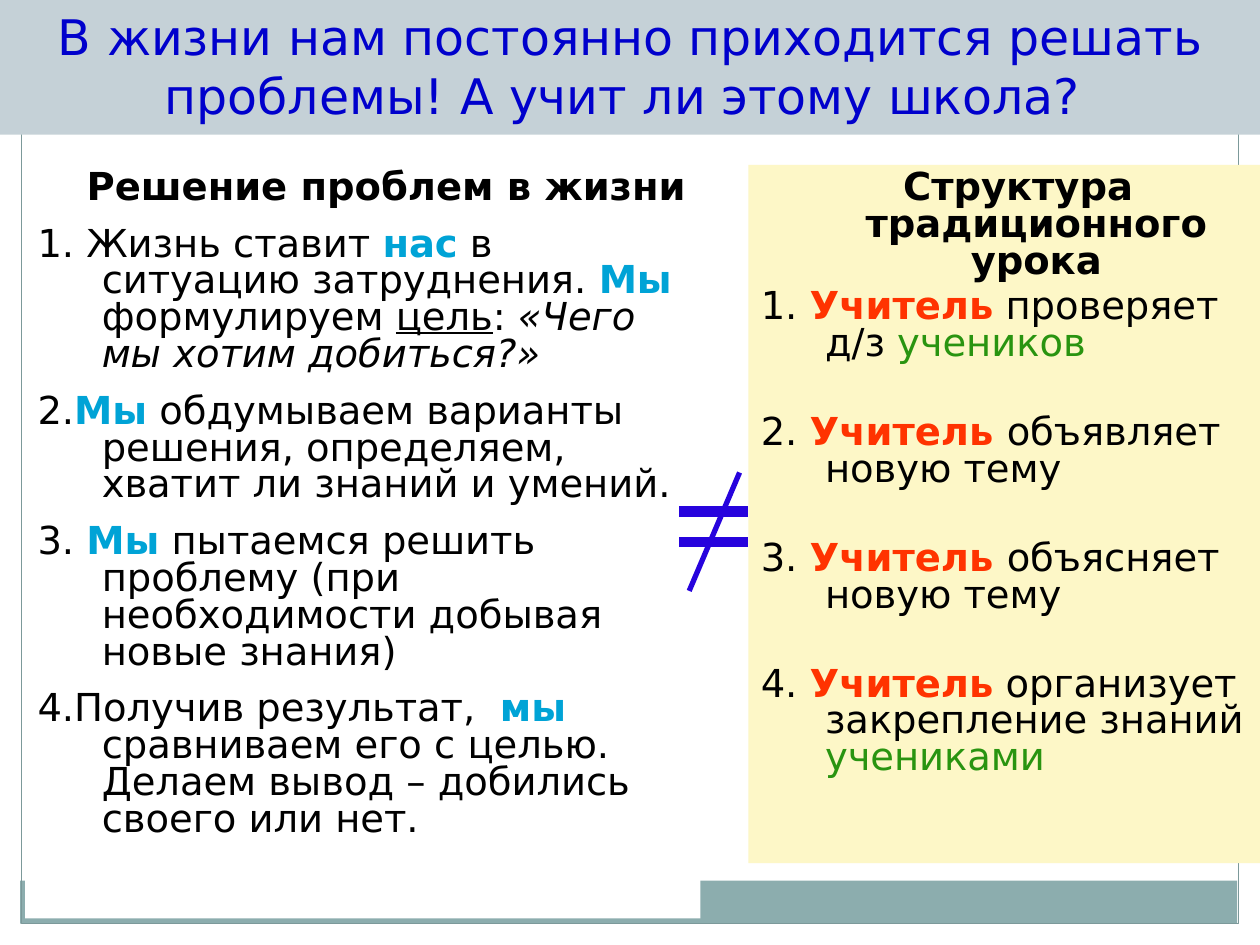
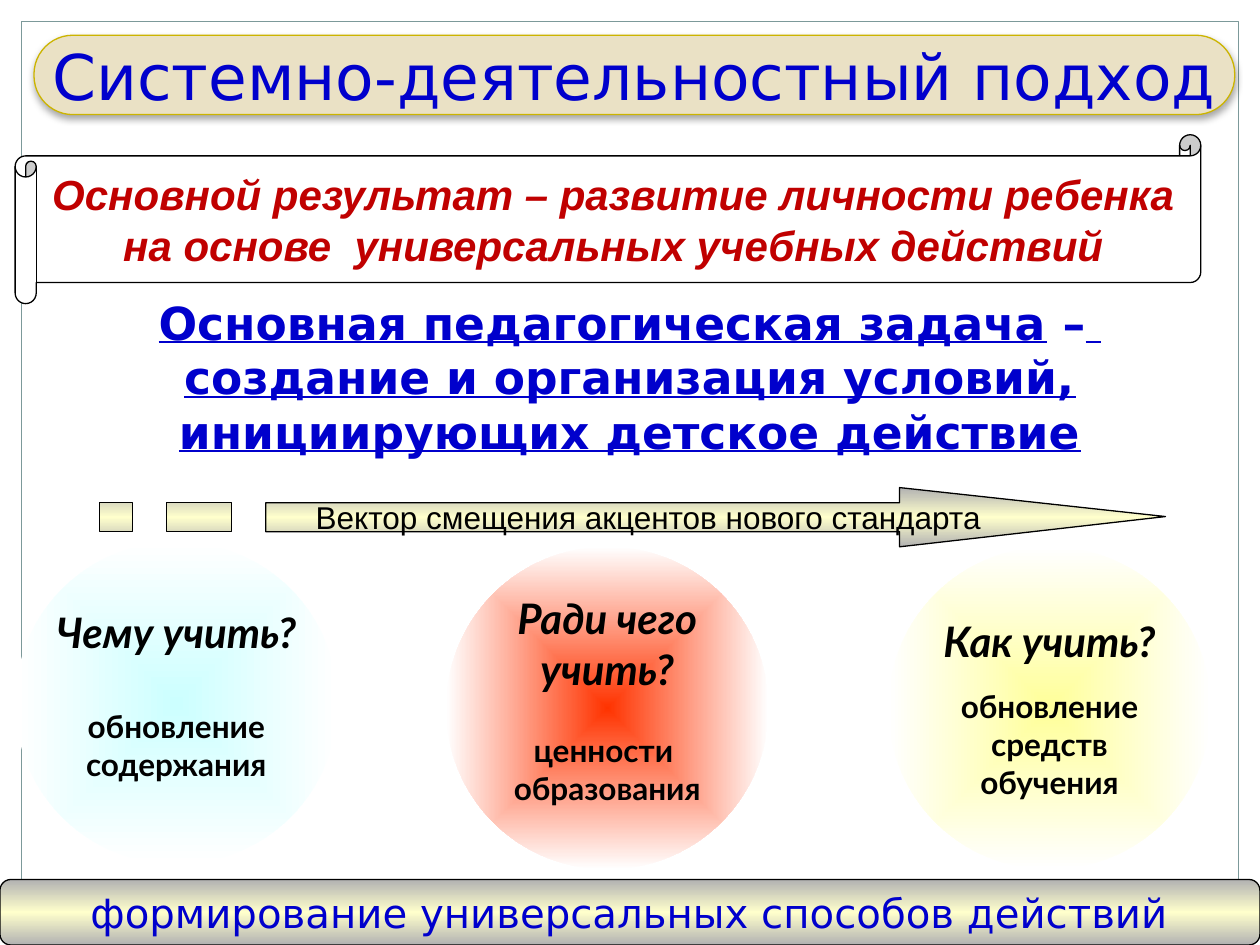
from pptx import Presentation
from pptx.dml.color import RGBColor
from pptx.enum.shapes import MSO_CONNECTOR, MSO_SHAPE
from pptx.enum.text import MSO_ANCHOR, PP_ALIGN
from pptx.oxml import parse_xml
from pptx.util import Inches, Pt

RECTANGLE, ELLIPSE = MSO_SHAPE.RECTANGLE, MSO_SHAPE.OVAL
ROUNDED, SCROLL = MSO_SHAPE.ROUNDED_RECTANGLE, MSO_SHAPE.HORIZONTAL_SCROLL
STRAIGHT = MSO_CONNECTOR.STRAIGHT
LEFT, CENTER = PP_ALIGN.LEFT, PP_ALIGN.CENTER
TOP, MIDDLE = MSO_ANCHOR.TOP, MSO_ANCHOR.MIDDLE

NAMESPACE = 'xmlns:a="http://schemas.openxmlformats.org/drawingml/2006/main"'
BLACK, WHITE = "000000", "FFFFFF"
TITLE_BLUE = "0000CC"
SIGN_BLUE = "2703DD"
FOOTER, FRAME = "8CADAE", "7C999A"
METAL = [(0, "B2B2B2"), (50, "FFFFCC"), (100, "B2B2B2")]
LINEAR_DOWN = '<a:lin ang="5400000" scaled="1"/>'
FROM_CENTER = ('<a:path path="shape"><a:fillToRect l="50000" t="50000" '
               'r="50000" b="50000"/></a:path>')

HANGING = 0.51
WE = {"color": "00A3D6", "bold": True}
TEACHER = {"color": "FF3300", "bold": True}
PUPILS = {"color": "299410"}


def rgb(color):
    return RGBColor.from_string(color)


class Slides:
    font = "DejaVu Sans"

    def __init__(self):
        self.deck = Presentation()
        self.deck.slide_width, self.deck.slide_height = Inches(10), Inches(7.5)
        self.page = None

    def start_page(self):
        self.page = self.deck.slides.add_slide(self.deck.slide_layouts[6])
        self.shape(RECTANGLE, 0.16, 6.99, 9.66, 0.34, fill=FOOTER)
        self.shape(RECTANGLE, 0.17, 0.17, 9.66, 7.16, line=FRAME)

    def shape(self, kind, left, top, width, height, fill=None, line=None, adjust=None):
        box = self.page.shapes.add_shape(
            kind, Inches(left), Inches(top), Inches(width), Inches(height))
        if adjust is not None:
            box.adjustments[0] = adjust
        self.paint(box, fill, line)
        return box

    def paint(self, box, fill, line):
        """Fill with a hex colour, gradient XML or nothing, and draw a thin outline."""
        if fill is None:
            box.fill.background()
        elif fill.startswith("<"):
            box._element.spPr.insert(2, parse_xml(fill))
        else:
            box.fill.solid()
            box.fill.fore_color.rgb = rgb(fill)
        if line:
            box.line.color.rgb = rgb(line)
            box.line.width = Pt(0.75)
        else:
            box.line.fill.background()
        box.shadow.inherit = False

    def gradient(self, stops, direction):
        steps = "".join(
            f'<a:gs pos="{place * 1000}"><a:srgbClr val="{color}"/></a:gs>'
            for place, color in stops)
        return (f'<a:gradFill {NAMESPACE} rotWithShape="1">'
                f'<a:gsLst>{steps}</a:gsLst>{direction}</a:gradFill>')

    def drop_shadow(self, box):
        properties = box._element.spPr
        properties.remove(properties.find("{*}effectLst"))
        properties.append(parse_xml(
            f'<a:effectLst {NAMESPACE}><a:outerShdw blurRad="{Pt(4)}" dist="{Pt(2)}" '
            'dir="5400000" rotWithShape="0"><a:srgbClr val="000000">'
            '<a:alpha val="35000"/></a:srgbClr></a:outerShdw></a:effectLst>'))

    def outline(self, contours, fill, line):
        """Build one freeform from several closed contours given in inches."""
        builder = None
        for contour in contours:
            first, *rest = [(Inches(x), Inches(y)) for x, y in contour]
            if builder is None:
                builder = self.page.shapes.build_freeform(*first, scale=1.0)
            else:
                builder.move_to(*first)
            builder.add_line_segments(rest, close=True)
        box = builder.convert_to_shape()
        self.paint(box, fill, line)
        return box

    def line(self, start, end, color, width):
        stroke = self.page.shapes.add_connector(
            STRAIGHT, *[Inches(value) for value in start + end])
        stroke.line.color.rgb = rgb(color)
        stroke.line.width = Pt(width)
        stroke._element.spPr.append(parse_xml(f"<a:effectLst {NAMESPACE}/>"))

    def text_box(self, left, top, width, height):
        return self.page.shapes.add_textbox(
            Inches(left), Inches(top), Inches(width), Inches(height))

    def frame(self, box, anchor=MIDDLE, wrap=True, left=0.1, bottom=0.05):
        box.text_frame.word_wrap = wrap
        box.text_frame.vertical_anchor = anchor
        box.text_frame.margin_left = Inches(left)
        box.text_frame.margin_bottom = Inches(bottom)

    def paragraph(self, box, spans, align=CENTER, before=0, spacing=None,
                  margin=0, indent=0, **style):
        """Add a paragraph; each span is a text or a (text, style changes) pair."""
        frame = box.text_frame
        para = frame.paragraphs[0]
        if para.runs:
            para = frame.add_paragraph()
        para.alignment = align
        para.space_before = Pt(before)
        if spacing:
            para.line_spacing = spacing
        properties = para._p.get_or_add_pPr()
        properties.set("marL", str(Inches(margin)))
        properties.set("indent", str(Inches(indent)))
        for item in spans:
            text, changes = (item, {}) if isinstance(item, str) else item
            self.span(para, text, **{**style, **changes})

    def span(self, para, text, size, color=BLACK, font=None,
             bold=False, italic=False, underline=False):
        span = para.add_run()
        span.text = text
        span.font.name = font or self.font
        span.font.size = Pt(size)
        span.font.color.rgb = rgb(color)
        span.font.bold, span.font.italic, span.font.underline = bold, italic, underline

    def column(self, box, heading, margin, indent, items, gaps):
        """Write a bold centred heading and hanging numbered items."""
        self.frame(box, TOP)
        self.paragraph(box, [heading], before=4.4, spacing=0.8, margin=margin,
                       indent=indent, size=22, bold=True)
        for spans, gap in zip(items, gaps):
            self.paragraph(box, spans, LEFT, gap, 0.8, HANGING, -HANGING, size=22)

    def circle(self, left, top, color, question, answer, gap, bottom):
        box = self.shape(ELLIPSE, left, top, 2.56, 2.56,
                         self.gradient([(0, color), (100, WHITE)], FROM_CENTER))
        self.frame(box, wrap=False, bottom=bottom)
        for text in question:
            self.paragraph(box, [text], size=24, font="Lato", bold=True, italic=True)
        for number, text in enumerate(answer):
            self.paragraph(box, [text], before=0 if number else gap,
                           size=18, font="Lato", bold=True)


def life_and_lesson(slides):
    slides.start_page()
    title = slides.shape(RECTANGLE, 0, -0.03, 10, 1.1, "C5D1D7")
    slides.frame(title)
    slides.paragraph(
        title, ["В жизни нам постоянно приходится решать проблемы! А учит ли этому школа? "],
        size=28, color=TITLE_BLUE)

    lesson = slides.shape(RECTANGLE, 5.94, 1.31, 4.06, 5.54, "FDF7C7")
    slides.column(lesson, "Структура традиционного урока", HANGING, -0.29, [
        ["1. ", ("Учитель", TEACHER), " проверяет д/з ", ("учеников", PUPILS)],
        ["2. ", ("Учитель ", TEACHER), "объявляет новую тему"],
        ["3. ", ("Учитель ", TEACHER), "объясняет новую тему"],
        ["4. ", ("Учитель", TEACHER), " организует закрепление знаний ",
         ("учениками", PUPILS)],
    ], [4.4, 29.7, 29.7, 29.7])

    life = slides.shape(RECTANGLE, 0.2, 1.31, 5.36, 5.98, WHITE)
    slides.column(life, "Решение проблем в жизни", 0.37, 0, [
        ["1. Жизнь ставит ", ("нас", WE), " в ситуацию затруднения. ", ("Мы", WE),
         " формулируем ", ("цель", {"underline": True}), ": ",
         ("«Чего мы хотим добиться?»", {"italic": True})],
        ["2.", ("Мы", WE),
         " обдумываем варианты решения, определяем, хватит ли знаний и умений."],
        ["3. ", ("Мы", WE),
         " пытаемся решить проблему (при необходимости добывая новые знания)"],
        ["4.Получив результат,  ", ("мы ", WE),
         "сравниваем его с целью. Делаем вывод – добились своего или нет."],
    ], [11] * 4)

    for height in (4.06, 4.3):
        slides.line((5.39, height), (5.94, height), SIGN_BLUE, 6)
    slides.line((5.87, 3.75), (5.47, 4.69), SIGN_BLUE, 3)


def activity_approach(slides):
    slides.start_page()
    metal = slides.gradient(METAL, LINEAR_DOWN)

    task = slides.text_box(0, 2.29, 10, 5.4)
    slides.frame(task, TOP)
    for spans in (
        ["Основная педагогическая задача", (" –", {"underline": False}), " "],
        ["создание и организация условий,"],
        ["инициирующих детское действие"],
    ):
        slides.paragraph(task, spans, size=26, color=TITLE_BLUE, bold=True, underline=True)

    slides.circle(7.05, 4.34, "FFFF99", ["Как учить?"],
                  ["обновление", "средств", "обучения"], 12, 0.05)
    slides.circle(3.54, 4.34, "FF3300", ["Ради чего", "учить?"],
                  ["ценности ", "образования"], 21.6, 0.18)
    slides.circle(0.12, 4.3, "CCFFFF", ["Чему учить?"],
                  ["обновление", "содержания"], 28.8, 0.18)

    title = slides.shape(ROUNDED, 0.27, 0.28, 9.53, 0.63, "EAE1C5", "CCB400", 0.49)
    slides.drop_shadow(title)
    slides.frame(title, wrap=False)
    slides.paragraph(title, ["Системно-деятельностный подход"], size=36, color=TITLE_BLUE)

    upper, lower = 3.99, 4.22
    head = [(7.14, 3.87), (7.14, upper), (2.11, upper), (2.11, lower),
            (7.14, lower), (7.14, 4.34), (9.25, 4.1)]
    dashes = [[(left, upper), (left, lower), (right, lower), (right, upper)]
              for left, right in ((1.32, 1.84), (0.79, 1.05))]
    vector = slides.outline([head] + dashes, metal, BLACK)
    slides.frame(vector, wrap=False, left=0.35)
    slides.paragraph(vector, ["Вектор смещения акцентов нового стандарта"],
                     size=18, font="Arial")

    result = slides.shape(SCROLL, 0.12, 1.07, 9.41, 1.34, WHITE, BLACK, 0.125)
    slides.frame(result, wrap=False)
    for text in ("Основной результат – развитие личности ребенка",
                 "на основе  универсальных учебных действий"):
        slides.paragraph(result, [text], size=24, font="Arial", color="C00000",
                         bold=True, italic=True)

    outcome = slides.shape(ROUNDED, 0, 6.98, 10, 0.52, metal, BLACK)
    slides.frame(outcome)
    slides.paragraph(outcome, ["формирование универсальных способов действий"],
                     size=23, color=TITLE_BLUE)


def main():
    slides = Slides()
    life_and_lesson(slides)
    activity_approach(slides)
    slides.deck.save("out.pptx")


if __name__ == "__main__":
    main()
